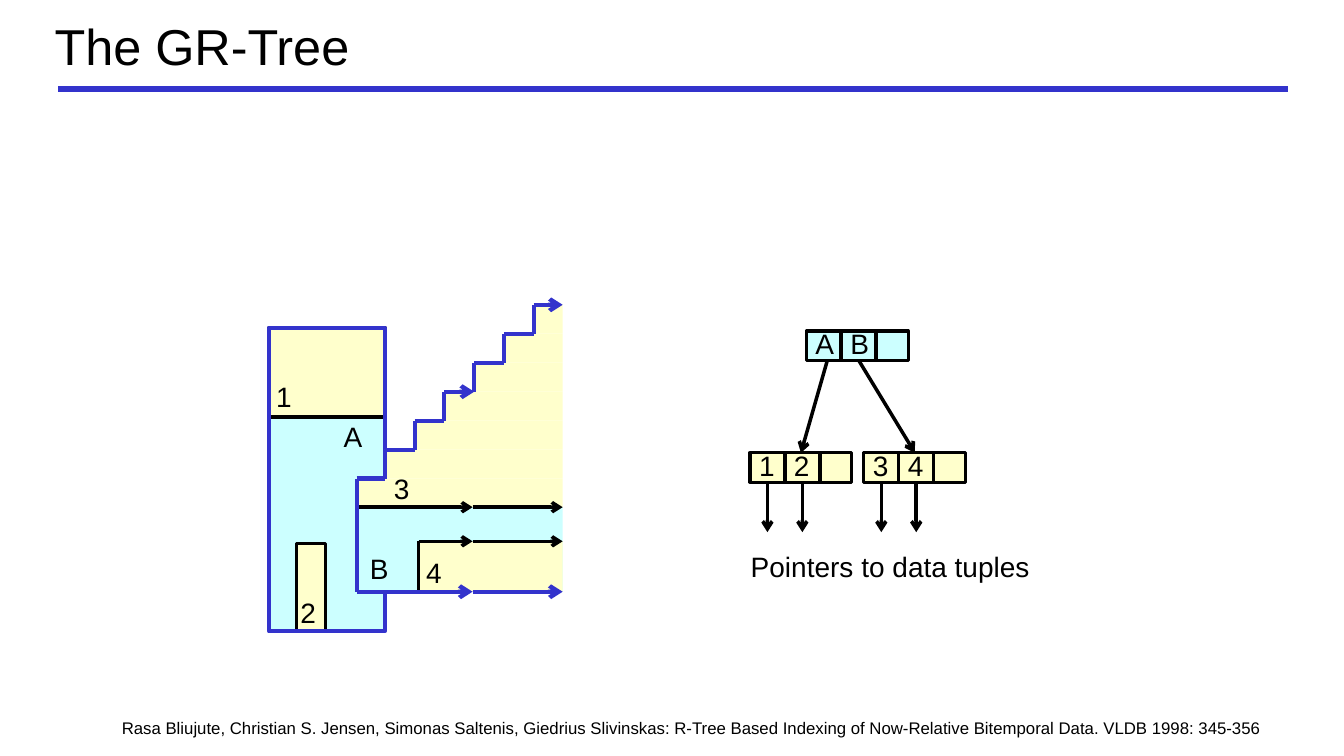
from lxml.etree import SubElement as Sub
from pptx import Presentation
from pptx.dml.color import RGBColor as RGB
from pptx.enum.shapes import MSO_CONNECTOR as Kind, MSO_SHAPE as Form
from pptx.enum.text import MSO_ANCHOR as Anchor, MSO_AUTO_SIZE as Auto, PP_ALIGN as Align
from pptx.oxml.ns import qn
from pptx.util import Cm, Pt

TITLE = "The GR-Tree"
SOURCE = ("Rasa Bliujute, Christian S. Jensen, Simonas Saltenis, Giedrius Slivinskas: "
          "R-Tree Based Indexing of Now-Relative Bitemporal Data. VLDB 1998: 345-356")
CAPTION = "Pointers to data tuples"
BLACK, BLUE, CYAN, CREAM = "000000", "3333CC", "CCFFFF", "FFFFCC"

LABELS = [("1", 6.71, 9.68), ("2", 7.32, 15.11), ("A", 8.41, 10.67),
          ("3", 9.68, 11.99), ("4", 10.49, 14.1), ("B", 9.07, 14)]
ROOT = ("AB", 20.32, 8.34, CYAN)
LEAVES = [("12", 18.9, 11.41, CREAM), ("34", 21.77, 11.41, CREAM)]
FORKS = [0.53, 1.32]

LEFT, RIGHT, TOP, BASE = 6.78, 9.7, 8.26, 15.91
INNER, NOW, END = 8.99, 11.91, 14.18
UPPER, SPLIT, LOWER, FLOOR = 12.06, 12.78, 13.64, 14.91
FOUR = 10.55
STEPS, RUN, RISE = 6, 0.75, 0.73
CELL, WIDE, HIGH = 0.88, 2.57, 0.74

deck = Presentation()
deck.slide_width, deck.slide_height = Cm(33.87), Cm(19.05)
slide = deck.slides.add_slide(deck.slide_layouts[5])
shapes = slide.shapes


def color(code):
    return RGB.from_string(code)


def apply(item, **form):
    for key, value in form.items():
        setattr(item, key, value)


def write(frame, text, size, **form):
    frame.text = text
    para = frame.paragraphs[0]
    apply(para, alignment=Align.LEFT, **form)
    font = para.runs[0].font
    apply(font, size=Pt(size), name="Arial", bold=False)
    font.color.rgb = color(BLACK)


def label(text, x, y, wide=0.91, high=0.86, **form):
    frame = shapes.add_textbox(Cm(x), Cm(y), Cm(wide), Cm(high)).text_frame
    apply(frame, word_wrap=False, auto_size=Auto.SHAPE_TO_FIT_TEXT)
    write(frame, text, 20, space_before=Pt(2), **form)


def box(x, y, right, low, fill=None, edge=None, width=2.5):
    rect = shapes.add_shape(Form.RECTANGLE, Cm(x), Cm(y), Cm(right - x), Cm(low - y))
    rect.shadow.inherit = False
    if fill:
        rect.fill.solid()
        rect.fill.fore_color.rgb = color(fill)
    else:
        rect.fill.background()
    if edge:
        rect.line.color.rgb = color(edge)
        rect.line.width = Pt(width)
    else:
        rect.line.fill.background()
    return rect


def line(x, y, right, low, ink=BLACK, width=2.5, arrow=False):
    link = shapes.add_connector(Kind.STRAIGHT, Cm(x), Cm(y), Cm(right), Cm(low))
    link.line.color.rgb = color(ink)
    link.line.width = Pt(width)
    props = link._element.spPr
    if arrow:
        Sub(props.find(qn("a:ln")), qn("a:tailEnd"), type="arrow")
    Sub(props, qn("a:effectLst"))
    return link


def ray(x, y, ink, width):
    for start, stop in [(x, NOW), (NOW, END)]:
        line(start, y, stop, y, ink, width, True)


def node(names, x, y, fill):
    rect = box(x, y, x + WIDE, y + HIGH, fill, BLACK, 2.25)
    for i, name in enumerate(names):
        edge = x + CELL * (i + 1)
        line(edge, y, edge, y + HIGH)
        label(name, edge - CELL / 2 - 0.46, y, line_spacing=0.7)
    return rect


line(1.47, 2.24, 32.46, 2.24, BLUE, 4)
title = shapes.title
apply(title, left=Cm(1.12), top=Cm(0.1), width=Cm(22.12), height=Cm(2.11))
title.text_frame.vertical_anchor = Anchor.MIDDLE
write(title.text_frame, TITLE, 36)

box(LEFT, TOP, RIGHT, BASE, CYAN)
box(LEFT, TOP, RIGHT, 10.51, CREAM, BLACK)
box(7.47, 13.69, 8.21, BASE, CREAM, BLACK)
box(LEFT, TOP, RIGHT, BASE, edge=BLUE, width=3)

box(INNER, SPLIT, END, FLOOR, CYAN)
box(INNER, UPPER, END, SPLIT, CREAM)
box(FOUR, LOWER, END, FLOOR, CREAM)
line(FOUR, LOWER, FOUR, FLOOR)
ray(INNER, SPLIT, BLACK, 2.5)
ray(FOUR, LOWER, BLACK, 2.5)

stairs = [(RIGHT + RUN * i, UPPER - RISE * (i + 1)) for i in range(STEPS)]
for x, y in stairs:
    box(x, y, END, y + RISE, CREAM)
for i, (x, y) in enumerate(stairs):
    line(x, y + RISE, x, y, BLUE, 3)
    line(x, y, min(x + RUN, END), y, BLUE, 3, i in (2, STEPS - 1))
line(INNER, UPPER, RIGHT, UPPER, BLUE, 3)
line(INNER, UPPER, INNER, FLOOR, BLUE, 3)
ray(INNER, FLOOR, BLUE, 3)
for text, x, y in LABELS:
    label(text, x, y, line_spacing=0.7)

node(*ROOT)
for fork, leaf in zip(FORKS, LEAVES):
    names, x, y, fill = leaf
    rect = node(*leaf)
    link = line(ROOT[1] + fork, ROOT[2] + HIGH, x + WIDE / 2, y, arrow=True)
    link.end_connect(rect, 0)
    for i in range(len(names)):
        mid = x + CELL * (i + 0.5)
        line(mid, y + HIGH, mid, 13.41, arrow=True)
label(CAPTION, 18.67, 13.72, 7.59, 1.12)

note = shapes.add_textbox(Cm(2.82), Cm(17.96), Cm(29.95), Cm(0.76)).text_frame
apply(note, word_wrap=True, auto_size=Auto.SHAPE_TO_FIT_TEXT)
write(note, SOURCE, 12)

deck.save("out.pptx")
